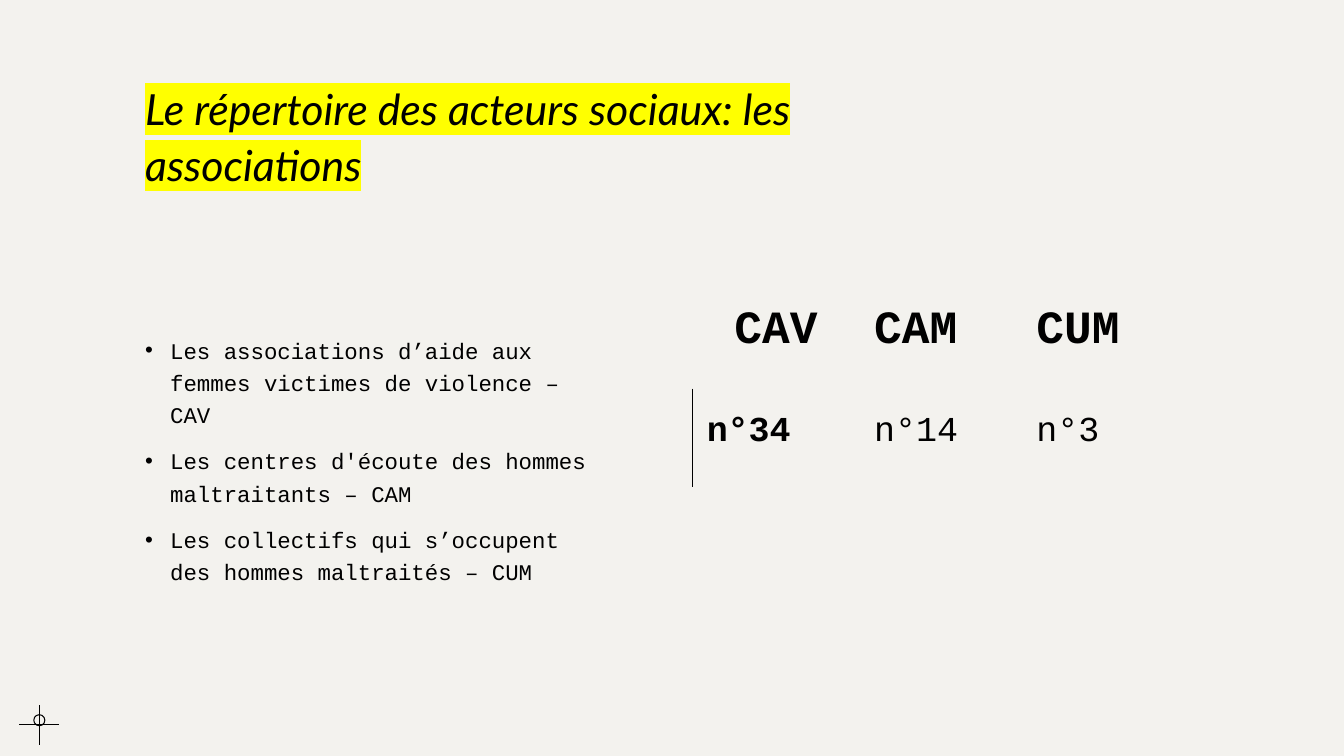
import pptx
import pptx.dml.color
import pptx.enum.shapes
import pptx.enum.text
import pptx.oxml
import pptx.oxml.ns
import pptx.util

Inches = pptx.util.Inches
Pt = pptx.util.Pt
MSO_ANCHOR = pptx.enum.text.MSO_ANCHOR
PP_ALIGN = pptx.enum.text.PP_ALIGN
NS = pptx.oxml.ns.nsdecls("a")

COLORS = {"background": "F3F2EE", "ink": "000000", "highlight": "FFFF00"}
TITLE_FONT = "Lato"
BODY_FONT = "Courier New"
NO_TABLE_STYLE = "{2D5ABB26-0587-4C30-8999-92F81FD0307C}"

TITLE = "Le répertoire des acteurs sociaux: les associations"
ASSOCIATIONS = [
    "Les associations d’aide aux femmes victimes de violence – CAV",
    "Les centres d'écoute des hommes maltraitants – CAM",
    "Les collectifs qui s’occupent des hommes maltraités – CUM",
]
COUNTS = [[" CAV", "CAM", "CUM"], ["n°34", "n°14", "n°3"]]


def color(name):
    return pptx.dml.color.RGBColor.from_string(COLORS[name])


def format_runs(paragraph, font, size, bold=False, italic=False):
    for run in paragraph.runs:
        run.font.name = font
        run.font.size = Pt(size)
        run.font.bold = bold
        run.font.italic = italic
        run.font.color.rgb = color("ink")


def add_title(slide, left, top, width, height):
    title = slide.shapes.title
    title.left, title.top = Inches(left), Inches(top)
    title.width, title.height = Inches(width), Inches(height)
    frame = title.text_frame
    frame.text = TITLE
    frame.word_wrap = True
    frame.auto_size = pptx.enum.text.MSO_AUTO_SIZE.NONE
    frame.vertical_anchor = MSO_ANCHOR.BOTTOM
    heading = frame.paragraphs[0]
    heading.alignment = PP_ALIGN.LEFT
    heading.line_spacing = 1.1
    format_runs(heading, TITLE_FONT, 30.6, italic=True)
    # The highlight follows the fill in the run properties
    fill = heading.runs[0].font._element.find(pptx.oxml.ns.qn("a:solidFill"))
    fill.addnext(pptx.oxml.parse_xml(
        f'<a:highlight {NS}><a:srgbClr val="{COLORS["highlight"]}"/></a:highlight>'))


def add_associations(slide, left, top, width, height):
    box = slide.shapes.add_textbox(Inches(left), Inches(top), Inches(width), Inches(height))
    frame = box.text_frame
    frame.word_wrap = True
    for index, association in enumerate(ASSOCIATIONS):
        item = frame.paragraphs[0] if index == 0 else frame.add_paragraph()
        item.text = association
        item.line_spacing = 1.2
        item.space_before = Pt(10)
        format_runs(item, BODY_FONT, 16)
        # Hanging bullet
        properties = item._p.get_or_add_pPr()
        properties.set("marL", str(Inches(0.25)))
        properties.set("indent", str(-Inches(0.25)))
        properties.append(pptx.oxml.parse_xml(f'<a:buFont {NS} typeface="Arial"/>'))
        properties.append(pptx.oxml.parse_xml(f'<a:buChar {NS} char="•"/>'))


def add_counts(slide, left, top, column_widths, row_heights):
    frame = slide.shapes.add_table(
        len(row_heights), len(column_widths), Inches(left), Inches(top),
        Inches(sum(column_widths)), Inches(sum(row_heights)))
    counts = frame.table
    counts.first_row = counts.horz_banding = False
    counts._tbl.tblPr.find(pptx.oxml.ns.qn("a:tableStyleId")).text = NO_TABLE_STYLE
    for column, width in zip(counts.columns, column_widths):
        column.width = Inches(width)
    for row, height in zip(counts.rows, row_heights):
        row.height = Inches(height)

    for r, values in enumerate(COUNTS):
        for c, value in enumerate(values):
            cell = counts.cell(r, c)
            header = r == 0
            cell.text = value
            cell.fill.background()
            cell.margin_left, cell.margin_right = Inches(0.14), Inches(0.15)
            cell.margin_top, cell.margin_bottom = Inches(0.04), Inches(0.31)
            cell.vertical_anchor = MSO_ANCHOR.BOTTOM if header else MSO_ANCHOR.TOP
            entry = cell.text_frame.paragraphs[0]
            entry.alignment = PP_ALIGN.JUSTIFY
            entry.line_spacing = 1.5
            format_runs(entry, BODY_FONT, 33 if header else 25, bold=header or c == 0)

    # Rule to the left of the first count
    counts.cell(1, 0)._tc.get_or_add_tcPr().insert(0, pptx.oxml.parse_xml(
        f'<a:lnL {NS} w="{Pt(0.75)}"><a:solidFill>'
        f'<a:srgbClr val="{COLORS["ink"]}"/></a:solidFill></a:lnL>'))


def add_crosshair(slide, left, top, size):
    crosshair = slide.shapes.add_group_shape()
    middle = size / 2
    arms = [(0, middle, size, middle), (middle, size, middle, 0)]
    for x1, y1, x2, y2 in arms:
        arm = crosshair.shapes.add_connector(
            pptx.enum.shapes.MSO_CONNECTOR.STRAIGHT,
            Inches(left + x1), Inches(top + y1), Inches(left + x2), Inches(top + y2))
        arm.line.color.rgb = color("ink")
        arm.line.width = Pt(0.75)
        arm._element.spPr.append(pptx.oxml.parse_xml(f"<a:effectLst {NS}/>"))
    # Ring, slightly above the crossing
    ring_size = 0.11
    ring = crosshair.shapes.add_shape(
        pptx.enum.shapes.MSO_SHAPE.OVAL,
        Inches(left + middle - ring_size / 2), Inches(top + 0.1),
        Inches(ring_size), Inches(ring_size))
    ring.shadow.inherit = False
    ring.fill.background()
    ring.line.color.rgb = color("ink")
    ring.line.width = Pt(0.75)


def main():
    deck = pptx.Presentation()
    deck.slide_width, deck.slide_height = Inches(13.33), Inches(7.5)
    slide = deck.slides.add_slide(deck.slide_layouts[5])
    slide.background.fill.solid()
    slide.background.fill.fore_color.rgb = color("background")

    add_title(slide, 1.34, 0.75, 7.76, 1.19)
    add_associations(slide, 1.34, 3.24, 4.6, 3.52)
    add_crosshair(slide, 0.19, 6.99, 0.4)
    add_counts(slide, 6.87, 2.68, [1.66, 1.61, 1.61], [1.16, 0.98])
    deck.save("out.pptx")


if __name__ == "__main__":
    main()
